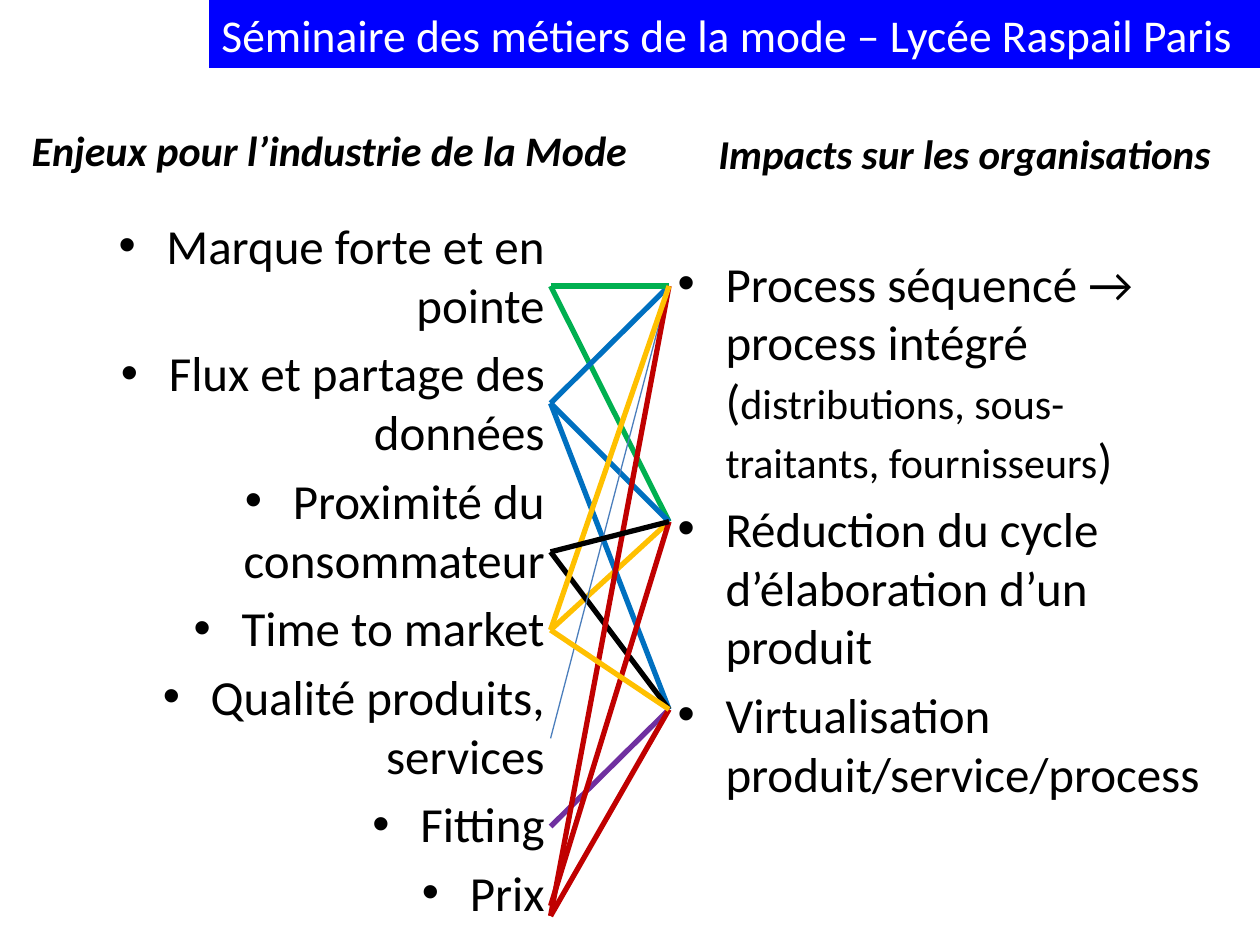
from lxml import etree
from pptx import Presentation
from pptx import util as u
from pptx.dml.color import RGBColor
from pptx.enum import shapes, text
from pptx.oxml.ns import qn

COLORS = {
    "banner": "0000FF", "white": "FFFFFF", "black": "000000",
    "green": "00B050", "blue": "0070C0", "gold": "FFC000",
    "purple": "7030A0", "red": "C00000", "thin": "4B7EBC",
}

deck = Presentation()
deck.slide_width, deck.slide_height = u.Inches(10), u.Inches(7.5)
COLUMN, ROW = deck.slide_width / 100, deck.slide_height / 75
slide = deck.slides.add_slide(deck.slide_layouts[5])


def cells(left, top, width, height):
    return [int(n * unit) for n, unit in zip((left, top, width, height), (COLUMN, ROW) * 2)]


def style(run, size, color="black", strong=False):
    run.font.name = "Calibri"
    run.font.size = u.Pt(size)
    run.font.bold = run.font.italic = strong
    run.font.color.rgb = RGBColor.from_string(COLORS[color])


banner = slide.shapes.add_shape(shapes.MSO_SHAPE.RECTANGLE, *cells(16.6, 0, 83.4, 5.4))
banner.shadow.inherit = False
banner.fill.solid()
banner.fill.fore_color.rgb = RGBColor.from_string(COLORS["banner"])
banner.line.fill.background()

challenges_title = slide.shapes.title
(challenges_title.left, challenges_title.top,
 challenges_title.width, challenges_title.height) = cells(0, 9.4, 52.3, 7)
impacts_title = slide.shapes.add_textbox(*cells(53.1, 9, 46.9, 6.3))

LEFT, CENTER, RIGHT = text.PP_ALIGN.LEFT, text.PP_ALIGN.CENTER, text.PP_ALIGN.RIGHT
TOP, MIDDLE = text.MSO_ANCHOR.TOP, text.MSO_ANCHOR.MIDDLE
headings = [
    (banner, "Séminaire des métiers de la mode – Lycée Raspail Paris", 26, "white", False, LEFT, MIDDLE),
    (challenges_title, "Enjeux pour l’industrie de la Mode", 24, "black", True, CENTER, TOP),
    (impacts_title, "Impacts sur les organisations", 23.4, "black", True, CENTER, MIDDLE),
]
for heading, words, size, color, strong, align, anchor in headings:
    frame = heading.text_frame
    frame.text = words
    frame.word_wrap = True
    frame.auto_size = text.MSO_AUTO_SIZE.NONE
    frame.vertical_anchor = anchor
    frame.paragraphs[0].alignment = align
    style(frame.paragraphs[0].runs[0], size, color, strong)

challenges = [
    "Marque forte et en pointe", "Flux et partage des données",
    "Proximité du consommateur", "Time to market",
    "Qualité produits, services", "Fitting", "Prix",
]
impacts = [
    "Process séquencé → process intégré (|distributions, sous-traitants, fournisseurs|)",
    "Réduction du cycle d’élaboration d’un produit",
    "Virtualisation produit/service/process",
]
lists = [
    (challenges, RIGHT, (7, 16.6, 37.2, 58.4)),
    (impacts, LEFT, (52.8, 19.6, 44.2, 58.4)),
]
for items, align, area in lists:
    frame = slide.shapes.add_textbox(*cells(*area)).text_frame
    frame.word_wrap = True
    for number, item in enumerate(items):
        paragraph = frame.add_paragraph() if number else frame.paragraphs[0]
        paragraph.alignment = align
        if number:
            paragraph.space_before = u.Pt(5.6)
        properties = paragraph._p.get_or_add_pPr()
        properties.set("marL", str(u.Inches(0.38)))
        properties.set("indent", str(-u.Inches(0.38)))
        etree.SubElement(properties, qn("a:buFont")).set("typeface", "Arial")
        etree.SubElement(properties, qn("a:buChar")).set("char", "•")
        for part, words in enumerate(item.split("|")):
            run = paragraph.add_run()
            run.text = words
            style(run, 24 if part == 1 else 28)

brand, flow, proximity, market, quality, fitting, price_high, price = (
    22.7, 32, 43.8, 50, 58.6, 65.6, 71.9, 72.7)
process, cycle, virtual = 22.7, 41.4, 56.3
links = [
    (brand, cycle, "green"), (market, cycle, "gold"),
    (flow, virtual, "blue"), (proximity, virtual, "black"),
    (flow, cycle, "blue"), (flow, process, "blue"),
    (fitting, virtual, "purple"), (price_high, cycle, "red"),
    (brand, process, "green"), (quality, process, "thin"),
    (price, process, "red"), (price, virtual, "red"),
    (market, virtual, "gold"), (market, process, "gold"),
    (proximity, cycle, "black"),
]
for challenge, impact, color in links:
    link = slide.shapes.add_connector(
        shapes.MSO_CONNECTOR.STRAIGHT, *cells(43.7, challenge, 53.1, impact))
    link.line.color.rgb = RGBColor.from_string(COLORS[color])
    link.line.width = u.Pt(0.75 if color == "thin" else 3)
    etree.SubElement(link._element.spPr, qn("a:effectLst"))

deck.save("out.pptx")
